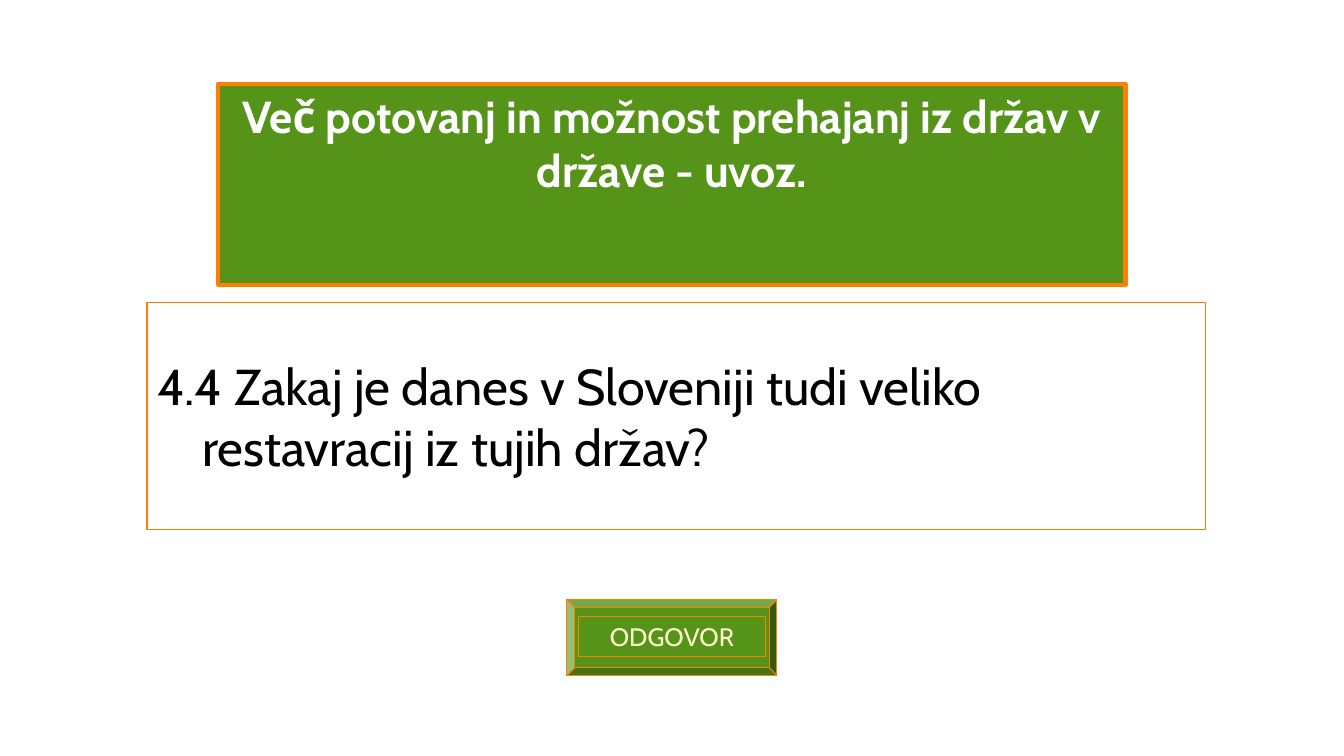
import pptx
import pptx.util
import pptx.dml.color
import pptx.enum.shapes
import pptx.enum.text

GREEN, ORANGE, WHITE = "569319", "FF7F00", "FFFFFF"
SHAPE = pptx.enum.shapes.MSO_SHAPE
ALIGN = pptx.enum.text.PP_ALIGN
ANCHOR = pptx.enum.text.MSO_ANCHOR

deck = pptx.Presentation()
deck.slide_width = pptx.util.Inches(13.33)
deck.slide_height = pptx.util.Inches(7.5)
column = deck.slide_width / 160
row = deck.slide_height / 90


def paint(panel, fill, line_width):
    panel.fill.solid()
    panel.fill.fore_color.rgb = pptx.dml.color.RGBColor.from_string(fill)
    panel.line.color.rgb = pptx.dml.color.RGBColor.from_string(ORANGE)
    panel.line.width = pptx.util.Pt(line_width)


def write(panel, text, size, color, bold=False, align=ALIGN.CENTER, anchor=ANCHOR.TOP):
    frame = panel.text_frame
    frame.word_wrap = True
    frame.auto_size = pptx.enum.text.MSO_AUTO_SIZE.NONE
    frame.vertical_anchor = anchor
    frame.text = text
    for paragraph in frame.paragraphs:
        paragraph.alignment = align
        paragraph.font.name = "Cabin"
        paragraph.font.size = pptx.util.Pt(size)
        paragraph.font.bold = bold
        paragraph.font.color.rgb = pptx.dml.color.RGBColor.from_string(color)


slide = deck.slides.add_slide(deck.slide_layouts[5])

question = slide.shapes.title
question.left, question.top = int(17.5 * column), int(36 * row)
question.width, question.height = int(126 * column), int(27 * row)
paint(question, WHITE, 0.75)
write(question, "4.4 Zakaj je danes v Sloveniji tudi veliko\nrestavracij iz tujih držav?",
      36, "000000", align=ALIGN.LEFT, anchor=ANCHOR.MIDDLE)
second_line = question.text_frame.paragraphs[1]
second_line._p.get_or_add_pPr().set("marL", str(int(5.4 * column)))

button = slide.shapes.add_group_shape()
panels = []
for parent, kind, left, top, width, height, line_width in [
    (button, SHAPE.BEVEL, 67.5, 71.4, 25, 9, 0.75),
    (button, SHAPE.RECTANGLE, 68.9, 73.4, 22.2, 4.8, 0.75),
    (slide, SHAPE.RECTANGLE, 26, 10, 108, 23.9, 3),
]:
    panel = parent.shapes.add_shape(kind, int(left * column), int(top * row),
                                    int(width * column), int(height * row))
    panel.shadow.inherit = False
    paint(panel, GREEN, line_width)
    panels.append(panel)

button_frame, button_label, answer = panels
button_frame.adjustments[0] = 0.104
write(button_label, "ODGOVOR", 18, "FFFFCC")
write(answer, "Več potovanj in možnost prehajanj iz držav v države - uvoz.", 32, WHITE, bold=True)

deck.save("out.pptx")
